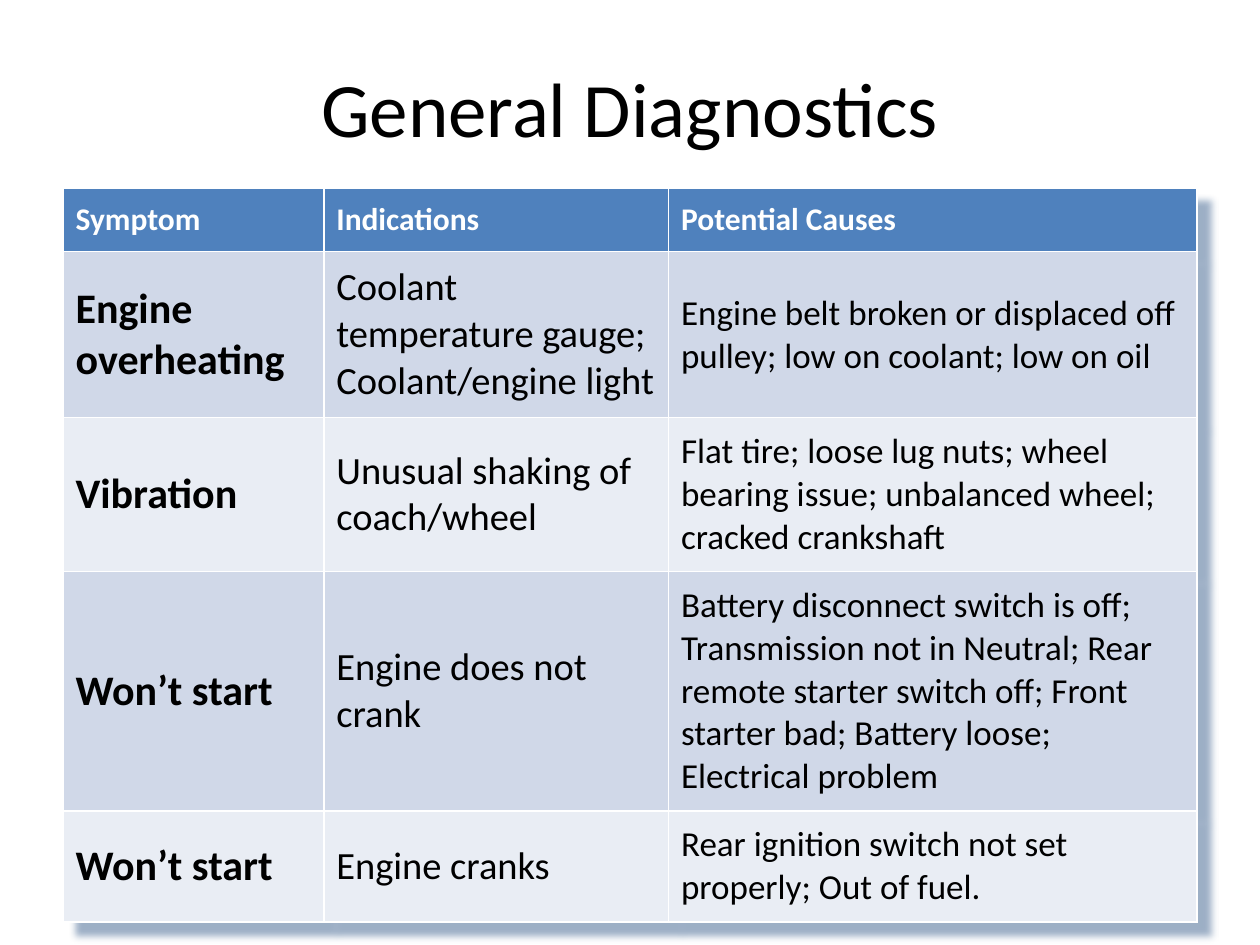
from lxml.etree import SubElement
from pptx import Presentation
from pptx.dml.color import RGBColor
from pptx.enum.text import MSO_ANCHOR, PP_ALIGN
from pptx.oxml.ns import qn
from pptx.util import Inches, Pt

FONT = "Calibri"
BLACK = RGBColor(0x00, 0x00, 0x00)
WHITE = RGBColor(0xFF, 0xFF, 0xFF)
HEADER_BLUE = RGBColor(0x4F, 0x81, 0xBD)
BANDS = (RGBColor(0xD0, 0xD8, 0xE8), RGBColor(0xE9, 0xED, 0xF4))
SHADOW_BLUE = RGBColor(0x1F, 0x49, 0x7D)

SLIDE_W, SLIDE_H = Inches(10), Inches(7.5)
MARGIN = SLIDE_W * 0.05
CONTENT_W = SLIDE_W - 2 * MARGIN
COLUMN_SHARES = (0.23, 0.304, 0.466)
COLUMN_SIZES = (24, 22, 20)
ROW_MIN = Inches(0.41)  # rows grow to fit their text
CELL_INSET = Inches(0.1)

HEADINGS = ("Symptom", "Indications", "Potential Causes")
DIAGNOSTICS = (
    ("Engine overheating",
     "Coolant temperature gauge;\nCoolant/engine light",
     "Engine belt broken or displaced off pulley; low on coolant; low on oil"),
    ("Vibration",
     "Unusual shaking of coach/wheel",
     "Flat tire; loose lug nuts; wheel bearing issue; unbalanced wheel; "
     "cracked crankshaft"),
    ("Won’t start",
     "Engine does not crank",
     "Battery disconnect switch is off; Transmission not in Neutral; Rear "
     "remote starter switch off; Front starter bad; Battery loose; "
     "Electrical problem"),
    ("Won’t start",
     "Engine cranks",
     "Rear ignition switch not set properly; Out of fuel."),
)


def write(frame, text, size, color=BLACK, bold=False, align=PP_ALIGN.LEFT):
    """Fill a text frame, one paragraph per line of text."""
    frame.text = text
    for paragraph in frame.paragraphs:
        paragraph.alignment = align
        for run in paragraph.runs:
            run.font.name = FONT
            run.font.size = Pt(size)
            run.font.bold = bold
            run.font.color.rgb = color


def add_title(slide, left, top, width, height):
    title = slide.shapes.title
    title.left, title.top = int(left), int(top)
    title.width, title.height = int(width), int(height)
    title.text_frame.vertical_anchor = MSO_ANCHOR.MIDDLE
    write(title.text_frame, "General Diagnostics", 44, align=PP_ALIGN.CENTER)


def add_table_shadow(table):
    """Cast a soft shadow down and to the right of the table."""
    effects = table._tbl.tblPr.makeelement(qn("a:effectLst"))
    table._tbl.tblPr.insert(0, effects)
    shadow = SubElement(effects, qn("a:outerShdw"), blurRad="50800",
                        dist="139700", dir="2700000", algn="tl", rotWithShape="0")
    color = SubElement(shadow, qn("a:srgbClr"), val=str(SHADOW_BLUE))
    SubElement(color, qn("a:alpha"), val="43000")


def add_diagnostics(slide, left, top, width, height):
    rows = (HEADINGS,) + DIAGNOSTICS
    frame = slide.shapes.add_table(len(rows), len(HEADINGS), int(left), int(top),
                                   int(width), ROW_MIN * len(rows))
    table = frame.table
    for column, share in zip(table.columns, COLUMN_SHARES):
        column.width = int(width * share)

    for r, texts in enumerate(rows):
        is_header = r == 0
        for c, text in enumerate(texts):
            cell = table.cell(r, c)
            cell.margin_left = cell.margin_right = CELL_INSET
            cell.margin_top = cell.margin_bottom = CELL_INSET
            cell.fill.solid()
            if is_header:
                cell.fill.fore_color.rgb = HEADER_BLUE
                write(cell.text_frame, text, 18, color=WHITE, bold=True)
            else:
                cell.fill.fore_color.rgb = BANDS[(r - 1) % 2]
                cell.vertical_anchor = MSO_ANCHOR.MIDDLE
                write(cell.text_frame, text, COLUMN_SIZES[c], bold=c == 0)

    add_table_shadow(table)
    frame.height = int(height)


def main():
    deck = Presentation()
    deck.slide_width, deck.slide_height = SLIDE_W, SLIDE_H
    slide = deck.slides.add_slide(deck.slide_layouts[5])
    add_title(slide, MARGIN, SLIDE_H * 0.03, CONTENT_W, SLIDE_H / 6)
    add_diagnostics(slide, MARGIN, SLIDE_H * 0.199, CONTENT_W, SLIDE_H * 0.764)
    deck.save("out.pptx")


if __name__ == "__main__":
    main()
